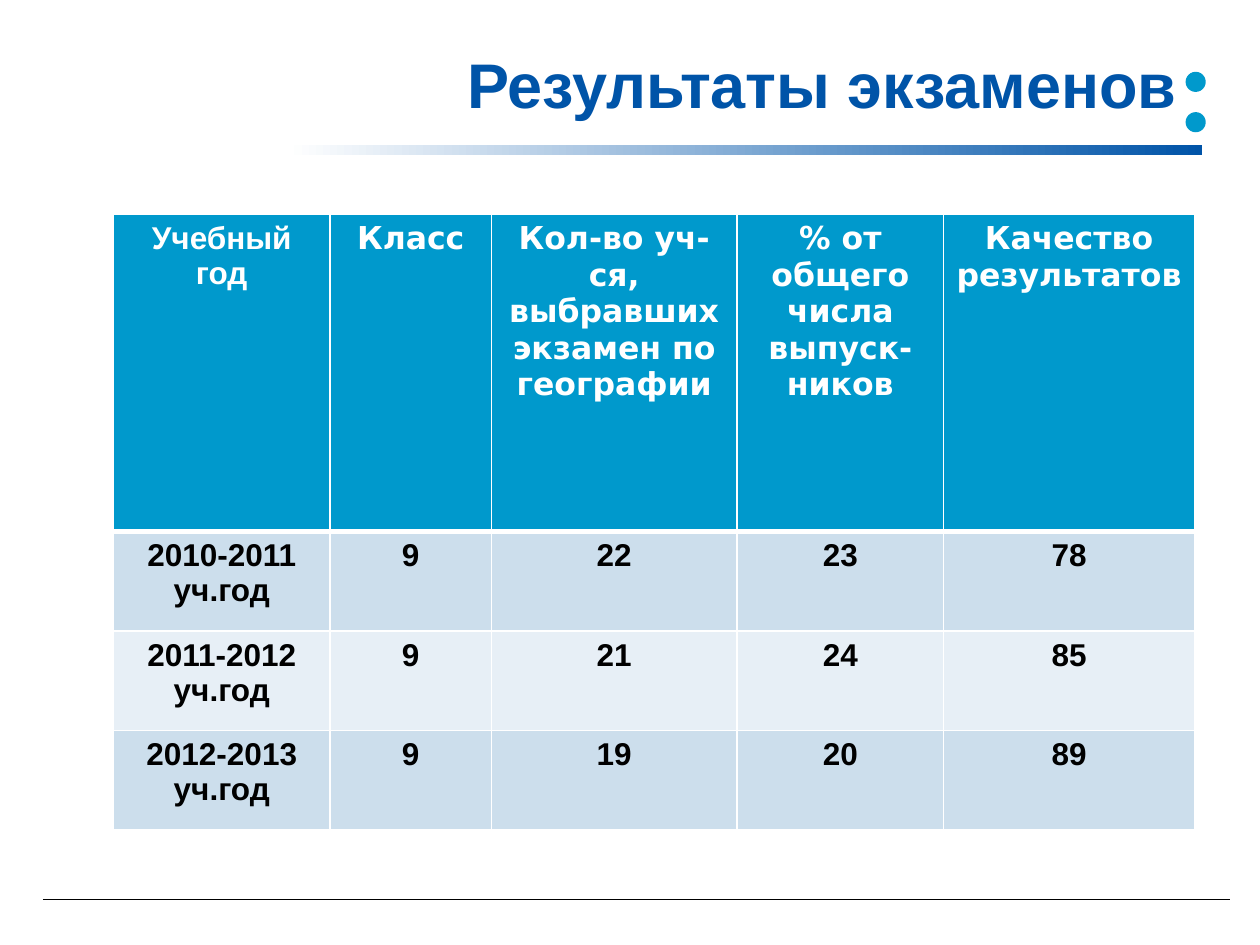
from lxml import etree
from pptx import Presentation
from pptx.dml.color import RGBColor
from pptx.enum.shapes import MSO_CONNECTOR, MSO_SHAPE
from pptx.enum.text import MSO_ANCHOR, PP_ALIGN
from pptx.oxml.ns import qn
from pptx.util import Inches, Pt

STRAIGHT = MSO_CONNECTOR.STRAIGHT
RECTANGLE, OVAL = MSO_SHAPE.RECTANGLE, MSO_SHAPE.OVAL
MIDDLE = MSO_ANCHOR.MIDDLE
CENTER, RIGHT = PP_ALIGN.CENTER, PP_ALIGN.RIGHT

WHITE = RGBColor(0xFF, 0xFF, 0xFF)
BLACK = RGBColor(0x00, 0x00, 0x00)
BLUE = RGBColor(0x00, 0x54, 0xA8)
TEAL = RGBColor(0x00, 0x99, 0xCC)
BAND_DARK = RGBColor(0xCC, 0xDE, 0xEC)
BAND_LIGHT = RGBColor(0xE7, 0xEF, 0xF6)

TITLE_ONLY_LAYOUT = 5
COLUMN_WIDTHS = [1.72, 1.28, 1.95, 1.64, 1.99]
ROW_HEIGHTS = [2.52, 0.79, 0.79, 0.79]
HEADERS = [
    "Учебный год",
    "Класс",
    "Кол-во уч-ся, выбравших экзамен по географии",
    "% от общего числа выпуск-\nников",
    "Качество результатов",
]
RESULTS = [
    ["2010-2011\nуч.год", "9", "22", "23", "78"],
    ["2011-2012\nуч.год", "9", "21", "24", "85"],
    ["2012-2013\nуч.год", "9", "19", "20", "89"],
]


class SlideBuilder:
    body_font = "Arial"
    header_font = "DejaVu Sans"

    def __init__(self, slide):
        self.slide = slide

    def format_text(self, text_frame, size, color, alignment, font_name):
        for paragraph in text_frame.paragraphs:
            paragraph.alignment = alignment
            for run in paragraph.runs:
                run.font.name = font_name
                run.font.size = Pt(size)
                run.font.bold = True
                run.font.color.rgb = color

    def title(self, text, left, top, width, height):
        shape = self.slide.shapes.title
        shape.left, shape.top = Inches(left), Inches(top)
        shape.width, shape.height = Inches(width), Inches(height)
        text_frame = shape.text_frame
        text_frame.text = text
        text_frame.vertical_anchor = MIDDLE
        self.format_text(text_frame, 36, BLUE, RIGHT, self.body_font)

    def shape(self, kind, left, top, width, height):
        shape = self.slide.shapes.add_shape(
            kind, Inches(left), Inches(top), Inches(width), Inches(height))
        shape.shadow.inherit = False
        shape.line.fill.background()
        return shape

    def dot(self, left, top, size):
        fill = self.shape(OVAL, left, top, size, size).fill
        fill.solid()
        fill.fore_color.rgb = TEAL

    def gradient_bar(self, left, top, width, height):
        fill = self.shape(RECTANGLE, left, top, width, height).fill
        fill.gradient()
        fill.gradient_angle = 0
        for stop, position, color in zip(fill.gradient_stops, (0, 1), (WHITE, BLUE)):
            stop.position = position
            stop.color.rgb = color

    def rule(self, left, right, y):
        connector = self.slide.shapes.add_connector(
            STRAIGHT, Inches(left), Inches(y), Inches(right), Inches(y))
        connector.line.color.rgb = BLACK
        connector.line.width = Pt(0.75)
        properties = connector._element.spPr
        etree.SubElement(properties, qn("a:effectLst"))

    def cell_borders(self, cell, top, bottom):
        properties = cell._tc.get_or_add_tcPr()
        for tag, width in (("lnL", 1), ("lnR", 1), ("lnT", top), ("lnB", bottom)):
            line = etree.SubElement(properties, qn(f"a:{tag}"), w=str(Pt(width)))
            fill = etree.SubElement(line, qn("a:solidFill"))
            etree.SubElement(fill, qn("a:srgbClr"), val=str(WHITE))

    def table(self, rows, left, top):
        table = self.slide.shapes.add_table(
            len(rows), len(COLUMN_WIDTHS), Inches(left), Inches(top),
            Inches(sum(COLUMN_WIDTHS)), Inches(sum(ROW_HEIGHTS))).table
        for column, width in zip(table.columns, COLUMN_WIDTHS):
            column.width = Inches(width)
        for row, height in zip(table.rows, ROW_HEIGHTS):
            row.height = Inches(height)
        for row_index, texts in enumerate(rows):
            is_header = row_index == 0
            band = BAND_DARK if row_index % 2 else BAND_LIGHT
            for column_index, text in enumerate(texts):
                cell = table.cell(row_index, column_index)
                # The line under the header is thicker than the others
                self.cell_borders(cell, 3 if row_index == 1 else 1,
                                  3 if is_header else 1)
                cell.fill.solid()
                cell.fill.fore_color.rgb = TEAL if is_header else band
                cell.text_frame.text = text
                use_header_font = is_header and column_index > 0
                self.format_text(
                    cell.text_frame, 18, WHITE if is_header else BLACK, CENTER,
                    self.header_font if use_header_font else self.body_font)


def main():
    presentation = Presentation()
    presentation.slide_width = Inches(10)
    presentation.slide_height = Inches(7.5)
    layout = presentation.slide_layouts[TITLE_ONLY_LAYOUT]
    builder = SlideBuilder(presentation.slides.add_slide(layout))

    # Decoration
    builder.rule(0.34, 9.76, 7.14)
    builder.gradient_bar(2.28, 1.15, 7.26, 0.08)
    for top in (0.57, 0.89):
        builder.dot(9.41, top, 0.16)

    # Title and exam results
    builder.title("Результаты экзаменов", 1.77, 0.21, 7.67, 0.91)
    builder.table([HEADERS] + RESULTS, 0.9, 1.7)

    presentation.save("out.pptx")


if __name__ == "__main__":
    main()
